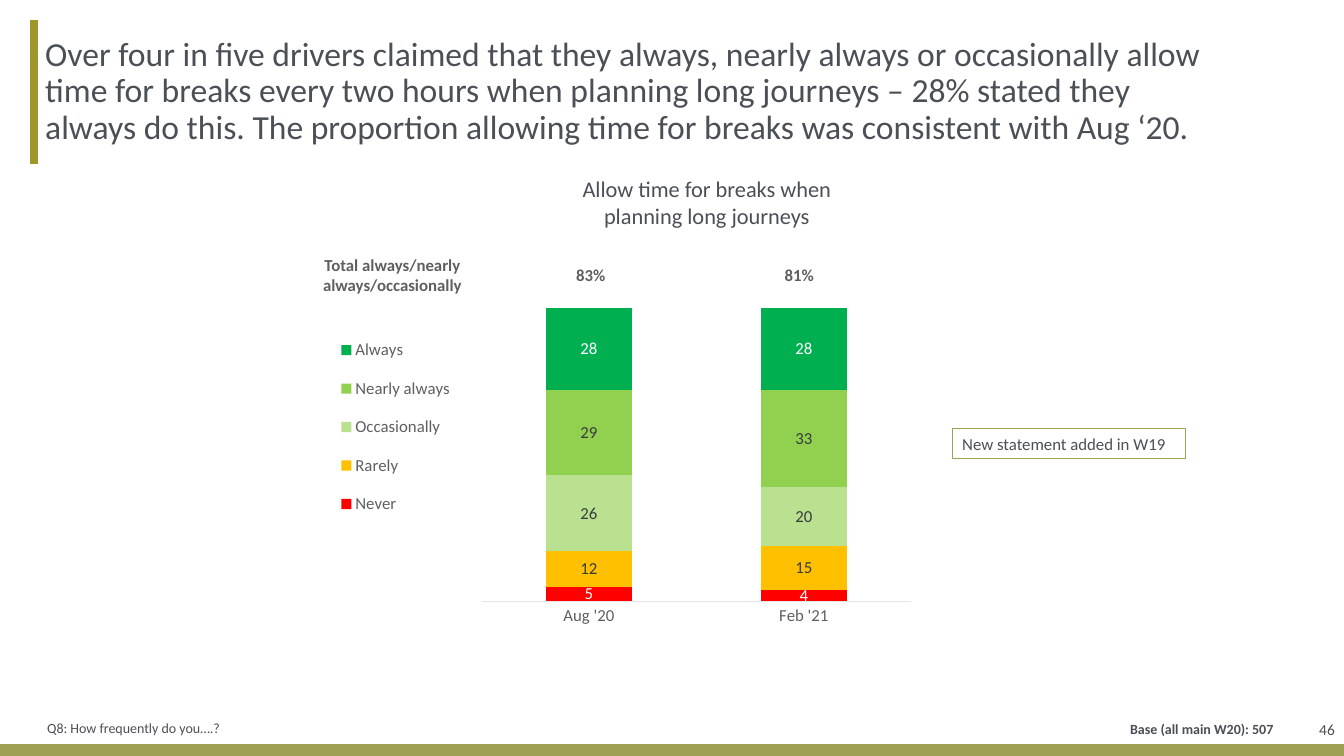
"""Build the slide on how often drivers allow time for breaks on long journeys."""
from dataclasses import dataclass, field
from typing import Any

from lxml.etree import SubElement
from pptx import Presentation
from pptx.chart.data import CategoryChartData
from pptx.dml.color import RGBColor
from pptx.enum.chart import XL_CHART_TYPE, XL_LEGEND_POSITION, XL_TICK_LABEL_POSITION, XL_TICK_MARK
from pptx.enum.shapes import MSO_CONNECTOR, MSO_SHAPE
from pptx.enum.text import MSO_ANCHOR, MSO_AUTO_SIZE, PP_ALIGN
from pptx.oxml.ns import qn
from pptx.slide import Slide
from pptx.util import Cm, Pt

FONT = "Calibri"
INK = RGBColor(0x4B, 0x4F, 0x56)
CHART_INK = RGBColor(0x5F, 0x5F, 0x5F)
LABEL_INK = RGBColor(0x38, 0x3B, 0x40)
WHITE = RGBColor(0xFF, 0xFF, 0xFF)
AXIS_GREY = RGBColor(0xE3, 0xE4, 0xE7)
OLIVE = RGBColor(0x9F, 0xA0, 0x52)
DARK_OLIVE = RGBColor(0x9F, 0x96, 0x2B)
RED = RGBColor(0xFF, 0x00, 0x00)
AMBER = RGBColor(0xFF, 0xC0, 0x00)
PALE_GREEN = RGBColor(0xBA, 0xE1, 0x8F)
LIGHT_GREEN = RGBColor(0x92, 0xD0, 0x50)
GREEN = RGBColor(0x00, 0xB0, 0x50)

SLIDE_WIDTH, SLIDE_HEIGHT = 33.87, 19.05
TITLE = (
    "Over four in five drivers claimed that they always, nearly always or occasionally allow time for "
    "breaks every two hours when planning long journeys – 28% stated they always do this. "
    "The proportion allowing time for breaks was consistent with Aug ‘20."
)


@dataclass
class Box:
    """A piece of text with its place in centimetres and its format."""
    text: str
    place: tuple[float, float, float, float]
    size: float
    align: PP_ALIGN = PP_ALIGN.LEFT
    bold: bool = False
    frame: dict[str, Any] = field(default_factory=dict)


@dataclass
class Answer:
    """One chart series with its colours."""
    name: str
    values: tuple[int, int]
    fill: RGBColor
    label: RGBColor = LABEL_INK


BOXES = [
    Box("46", (31.55, 17.65, 2.34, 1.47), 11, PP_ALIGN.RIGHT, frame={"vertical_anchor": MSO_ANCHOR.MIDDLE}),
    Box("Q8: How frequently do you….?", (0.94, 18.01, 24.03, 0.69), 10,
        frame={"vertical_anchor": MSO_ANCHOR.MIDDLE}),
    Box("Base (all main W20): 507", (22.33, 18.03, 10.01, 0.81), 10, PP_ALIGN.RIGHT, True),
    Box("Allow time for breaks when planning long journeys", (14.35, 4.29, 6.93, 1.63), 16, PP_ALIGN.CENTER),
]
NOTE = Box("New statement added in W19", (24, 10.8, 5.87, 0.76), 12)
HEADING = Box(TITLE, (0.94, 0.51, 29.59, 3.61), 24, frame={
    "vertical_anchor": MSO_ANCHOR.MIDDLE, "auto_size": MSO_AUTO_SIZE.NONE,
    "margin_left": Cm(0.2), "margin_right": 0, "margin_top": 0, "margin_bottom": 0})
ANSWERS = [
    Answer("Never", (4, 5), RED, WHITE),
    Answer("Rarely", (15, 12), AMBER),
    Answer("Occasionally", (20, 26), PALE_GREEN),
    Answer("Nearly always", (33, 29), LIGHT_GREEN),
    Answer("Always", (28, 28), GREEN, WHITE),
]
TOTALS = [("Total always/nearly always/occasionally", 0.3), ("83%", 0.3), ("81%", 0.81)]


def apply(target: Any, formats: dict[str, Any]) -> None:
    """Set every named attribute on the target."""
    for name, value in formats.items():
        setattr(target, name, value)


def format_font(font: Any, size: float, color: RGBColor, bold: bool = False) -> None:
    """Give a font its face, size, weight and colour."""
    apply(font, {"name": FONT, "size": Pt(size), "bold": bold})
    font.color.rgb = color


def lengths(place: tuple[float, ...]) -> list[Cm]:
    """Turn centimetres into lengths."""
    return [Cm(value) for value in place]


def write(shape: Any, box: Box) -> None:
    """Put the text of a box into a shape."""
    apply(shape.text_frame, {"word_wrap": True, "vertical_anchor": MSO_ANCHOR.TOP, **box.frame})
    paragraph = shape.text_frame.paragraphs[0]
    paragraph.text = box.text
    paragraph.alignment = box.align
    format_font(paragraph.runs[0].font, box.size, INK, box.bold)


def add_rectangle(slide: Slide, place: tuple[float, ...]) -> Any:
    """Add a rectangle without shadow."""
    shape = slide.shapes.add_shape(MSO_SHAPE.RECTANGLE, *lengths(place))
    shape.shadow.inherit = False
    return shape


def add_frame(slide: Slide) -> None:
    """Draw the bottom band, the accent line and the title."""
    band = add_rectangle(slide, (0, 18.75, SLIDE_WIDTH, 0.3))
    band.fill.solid()
    band.fill.fore_color.rgb = OLIVE
    band.line.fill.background()
    accent = slide.shapes.add_connector(MSO_CONNECTOR.STRAIGHT, *lengths((0.86, 0.51, 0.86, 4.14)))
    accent.line.color.rgb = DARK_OLIVE
    accent.line.width = Pt(6)
    SubElement(accent._element.spPr, qn("a:effectLst"))
    title = slide.shapes.title
    apply(title, dict(zip(("left", "top", "width", "height"), lengths(HEADING.place))))
    write(title, HEADING)
    title.text_frame.paragraphs[0].line_spacing = 0.9


def add_note(slide: Slide) -> None:
    """Draw the outlined note."""
    shape = add_rectangle(slide, NOTE.place)
    shape.fill.background()
    shape.line.color.rgb = OLIVE
    shape.line.width = Pt(0.75)
    write(shape, NOTE)


def set_layout(parent: Any, position: int, values: dict[str, Any]) -> None:
    """Give a chart part a manual layout."""
    for present in parent.findall(qn("c:layout")):
        parent.remove(present)
    layout = SubElement(parent, qn("c:layout"))
    parent.insert(position, layout)
    manual = SubElement(layout, qn("c:manualLayout"))
    for name, value in values.items():
        SubElement(manual, qn(f"c:{name}")).set("val", str(value))


def add_answers_chart(slide: Slide) -> None:
    """Draw the stacked columns of answers."""
    data = CategoryChartData(number_format="#,##0")
    data.categories = ["Feb '21", "Aug '20"]
    for answer in ANSWERS:
        data.add_series(answer.name, answer.values)
    place = lengths((7.65, 4.52, 15.47, 11.56))
    chart = slide.shapes.add_chart(XL_CHART_TYPE.COLUMN_STACKED_100, *place, data).chart
    format_font(chart.font, 12, CHART_INK)
    apply(chart, {"has_title": False, "has_legend": True})
    apply(chart.legend, {"position": XL_LEGEND_POSITION.LEFT, "include_in_layout": False})
    format_font(chart.legend.font, 12, CHART_INK)
    plot = chart.plots[0]
    apply(plot, {"gap_width": 150, "overlap": 100, "vary_by_categories": False})
    for axis in (chart.category_axis, chart.value_axis):
        apply(axis, {"has_major_gridlines": False, "major_tick_mark": XL_TICK_MARK.NONE,
                     "minor_tick_mark": XL_TICK_MARK.NONE})
        format_font(axis.tick_labels.font, 12, CHART_INK)
    chart.category_axis.reverse_order = True
    chart.category_axis.format.line.color.rgb = AXIS_GREY
    chart.category_axis.format.line.width = Pt(0.75)
    chart.value_axis.tick_label_position = XL_TICK_LABEL_POSITION.NONE
    chart.value_axis.format.line.fill.background()
    for series, answer in zip(plot.series, ANSWERS):
        series.format.fill.solid()
        series.format.fill.fore_color.rgb = answer.fill
        labels = series.data_labels
        apply(labels, {"show_value": True, "number_format": "#,##0", "number_format_is_linked": False})
        format_font(labels.font, 12, answer.label)
    edges = {"xMode": "edge", "yMode": "edge"}
    set_layout(chart.element.find(f".//{qn('c:plotArea')}"), 0,
               {"layoutTarget": "inner", **edges, "x": 0.29, "y": 0.28, "w": 0.7, "h": 0.64})
    set_layout(chart.element.find(f".//{qn('c:legend')}"), 1,
               {**edges, "x": 0.02, "y": 0.31, "w": 0.26, "h": 0.46})


def add_totals_table(slide: Slide) -> None:
    """Draw the row of totals above the columns."""
    place = lengths((7.34, 6.43, 15, 1.04))
    table = slide.shapes.add_table(1, len(TOTALS), *place).table
    apply(table, {"first_row": False, "horz_banding": False})
    for cell, (text, margin) in zip(table.rows[0].cells, TOTALS):
        cell.fill.background()
        apply(cell, {"vertical_anchor": MSO_ANCHOR.MIDDLE, "margin_left": Cm(margin),
                     "margin_right": Cm(0.2), "margin_top": 0, "margin_bottom": 0})
        paragraph = cell.text_frame.paragraphs[0]
        paragraph.text = text
        paragraph.alignment = PP_ALIGN.CENTER
        format_font(paragraph.runs[0].font, 12, CHART_INK, True)


def main() -> None:
    """Build and save the presentation."""
    presentation = Presentation()
    apply(presentation, {"slide_width": Cm(SLIDE_WIDTH), "slide_height": Cm(SLIDE_HEIGHT)})
    slide = presentation.slides.add_slide(presentation.slide_layouts[5])
    add_frame(slide)
    add_note(slide)
    add_answers_chart(slide)
    add_totals_table(slide)
    for box in BOXES:
        write(slide.shapes.add_textbox(*lengths(box.place)), box)
    presentation.save("out.pptx")


if __name__ == "__main__":
    main()
